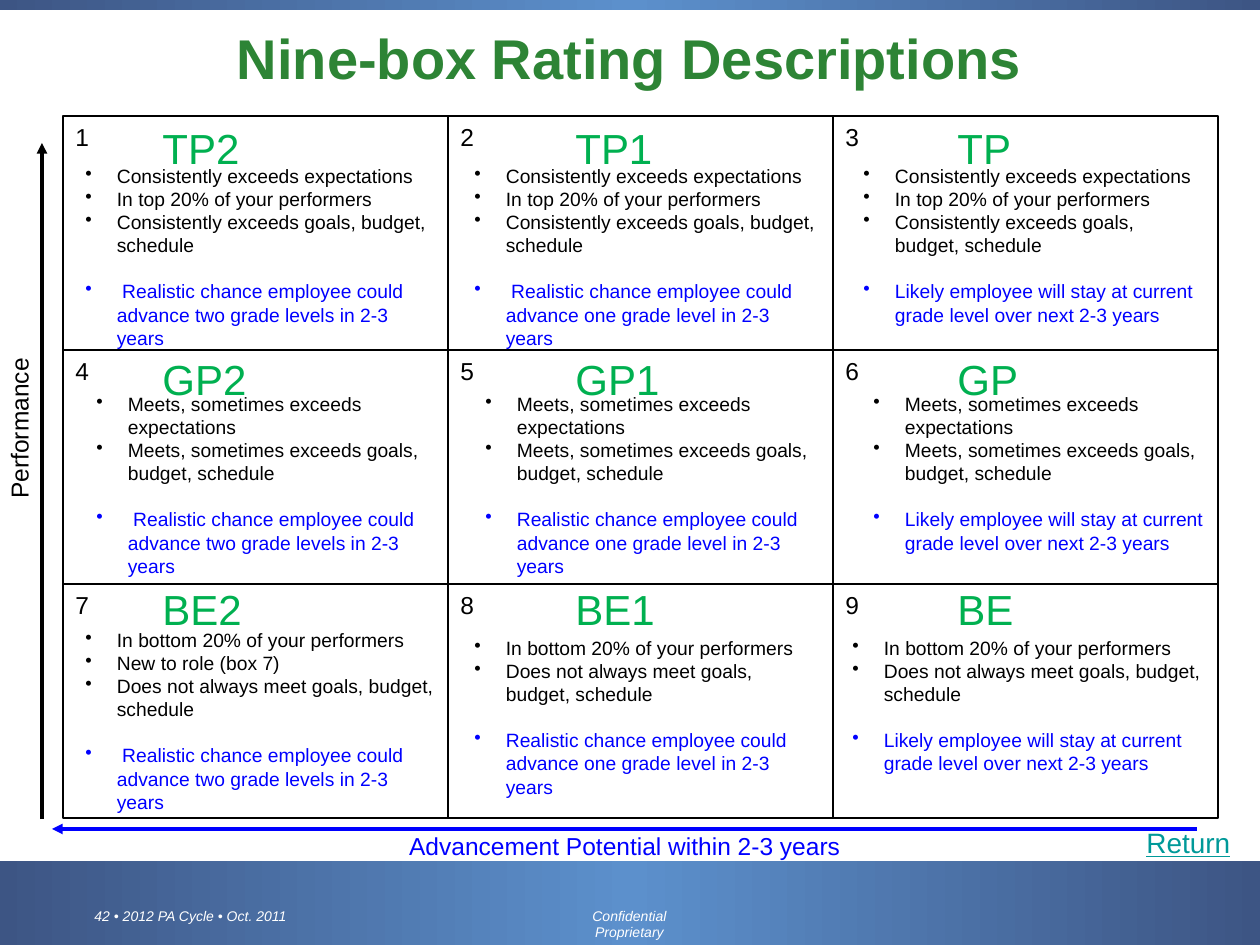
from copy import deepcopy

from lxml.etree import SubElement
from pptx import Presentation
from pptx.dml.color import RGBColor
from pptx.enum.shapes import MSO_CONNECTOR, MSO_SHAPE
from pptx.enum.text import MSO_ANCHOR, MSO_AUTO_SIZE, PP_ALIGN
from pptx.oxml.ns import qn
from pptx.util import Emu, Pt

BLACK = RGBColor(0, 0, 0)
WHITE = RGBColor(255, 255, 255)
BLUE = RGBColor(0, 0, 255)
GREEN = RGBColor(0, 0xB0, 0x50)
TITLE_GREEN = RGBColor(0x2D, 0x84, 0x35)
TEAL = RGBColor(0, 0x99, 0x99)
BAND_DARK = RGBColor(0x3D, 0x55, 0x84)
BAND_LIGHT = RGBColor(0x5C, 0x90, 0xCC)

TOP = ["Consistently exceeds expectations", "In top 20% of your performers",
       "Consistently exceeds goals, budget, schedule"]
GOOD = ["Meets, sometimes exceeds expectations",
        "Meets, sometimes exceeds goals, budget, schedule"]
BELOW = ["In bottom 20% of your performers",
         "Does not always meet goals, budget, schedule"]
BELOW_NEW = [BELOW[0], "New to role (box 7)", BELOW[1]]
TWO_LEVELS = " Realistic chance employee could advance two grade levels in 2-3 years"
ONE_LEVEL = "Realistic chance employee could advance one grade level in 2-3 years"
STAY = "Likely employee will stay at current grade level over next 2-3 years"

RATINGS = [
    ("TP2", TOP, TWO_LEVELS, (73, 158, 378, 199)),
    ("TP1", TOP, " " + ONE_LEVEL, (462, 158, 368, 199)),
    ("TP", TOP, STAY, (851, 158, 357, 176)),
    ("GP2", GOOD, TWO_LEVELS, (84, 386, 378, 199)),
    ("GP1", GOOD, ONE_LEVEL, (473, 386, 368, 199)),
    ("GP", GOOD, STAY, (861, 386, 357, 176)),
    ("BE2", BELOW_NEW, TWO_LEVELS, (73, 622, 378, 199)),
    ("BE1", BELOW, ONE_LEVEL, (462, 630, 368, 176)),
    ("BE", BELOW, STAY, (840, 630, 378, 152)),
]
GRID_LEFT, GRID_TOP, CELL_WIDTH, CELL_HEIGHT = 63, 116, 385, 234
LABEL_LEFTS = [150, 563, 945]
LABEL_TOPS = [116, 347, 577]
LABEL_WIDTH, LABEL_HEIGHT = 110, 63
BANDS = [(0, 861, 1260, 84), (0, 0, 1260, 10)]
ARROWS = [((42, 819), (42, 143), BLACK), ((1197, 829), (52, 829), BLUE)]


def px(value):
    return Emu(round(value * 914400 / 126))


def lengths(values):
    return [px(value) for value in values]


def style(font, size, color):
    font.name = "Arial"
    font.size = Pt(size)
    font.color.rgb = color


def add_rectangle(page, frame):
    box = page.shapes.add_shape(MSO_SHAPE.RECTANGLE, *lengths(frame))
    box.shadow.inherit = False
    return box


def add_text(page, frame, text, size, color, align=PP_ALIGN.LEFT, wrap=True):
    box = page.shapes.add_textbox(*lengths(frame))
    box.text_frame.word_wrap = wrap
    box.text_frame.text = text
    paragraph = box.text_frame.paragraphs[0]
    paragraph.alignment = align
    style(paragraph.runs[0].font, size, color)
    return box


def add_band(page, frame):
    band = add_rectangle(page, frame)
    band.line.fill.background()
    band.fill.gradient()
    band.fill.gradient_angle = 0
    start, middle = band.fill.gradient_stops
    start.color.rgb, start.position = BAND_DARK, 0
    middle.color.rgb, middle.position = BAND_LIGHT, 0.5
    stops = band._element.spPr.find(".//" + qn("a:gsLst"))
    end = deepcopy(stops[0])
    end.set("pos", "100000")
    stops.append(end)


def add_description(page, frame, points, outlook):
    box = add_rectangle(page, frame)
    box.fill.solid()
    box.fill.fore_color.rgb = WHITE
    box.line.fill.background()
    text_frame = box.text_frame
    text_frame.word_wrap = True
    text_frame.vertical_anchor = MSO_ANCHOR.TOP
    text_frame.text = "\n".join([*points, outlook])
    for paragraph in text_frame.paragraphs:
        paragraph.alignment = PP_ALIGN.LEFT
        properties = paragraph._p.get_or_add_pPr()
        properties.set("marL", "228600")
        properties.set("indent", "-228600")
        SubElement(properties, qn("a:buChar"), char="•")
        style(paragraph.runs[0].font, 11, BLACK)
    last = text_frame.paragraphs[-1]
    last.space_before = Pt(13.2)
    last.runs[0].font.color.rgb = BLUE


def add_arrow(page, start, end, color):
    arrow = page.shapes.add_connector(MSO_CONNECTOR.STRAIGHT, *lengths(start + end))
    arrow.line.color.rgb = color
    arrow.line.width = Pt(2)
    SubElement(arrow.line._get_or_add_ln(), qn("a:tailEnd"), type="triangle")
    SubElement(arrow._element.spPr, qn("a:effectLst"))


def main():
    deck = Presentation()
    deck.slide_width, deck.slide_height = px(1260), px(945)
    page = deck.slides.add_slide(deck.slide_layouts[5])

    title = page.shapes.title
    title.left, title.top, title.width, title.height = lengths((10, 10, 1239, 95))
    title.text_frame.text = "Nine-box Rating Descriptions"
    title.text_frame.auto_size = MSO_AUTO_SIZE.NONE
    title.text_frame.vertical_anchor = MSO_ANCHOR.MIDDLE
    heading = title.text_frame.paragraphs[0]
    heading.alignment = PP_ALIGN.CENTER
    style(heading.runs[0].font, 32, TITLE_GREEN)
    heading.runs[0].font.bold = True

    for frame in BANDS:
        add_band(page, frame)
    footers = [
        add_text(page, (82, 901, 335, 29), "42 • 2012 PA Cycle • Oct. 2011", 8, WHITE),
        add_text(page, (544, 901, 171, 29), "Confidential\vProprietary", 8, WHITE,
                 PP_ALIGN.CENTER),
    ]
    for footer in footers:
        for span in footer.text_frame.paragraphs[0].runs:
            style(span.font, 8, WHITE)
            span.font.italic = True

    for name, points, outlook, frame in RATINGS:
        add_description(page, frame, points, outlook)

    for index, (name, *details) in enumerate(RATINGS):
        row, column = divmod(index, 3)
        left = GRID_LEFT + column * CELL_WIDTH
        top = GRID_TOP + row * CELL_HEIGHT
        cell = add_rectangle(page, (left, top, CELL_WIDTH, CELL_HEIGHT))
        cell.fill.background()
        cell.line.color.rgb = BLACK
        cell.line.width = Pt(1)
        add_text(page, (left, top, 64, 44), str(index + 1), 14, BLACK)
        add_text(page, (LABEL_LEFTS[column], LABEL_TOPS[row], LABEL_WIDTH, LABEL_HEIGHT),
                 name, 24, GREEN)

    performance = add_text(page, (-94, 407, 227, 43), "Performance", 14, BLACK,
                           PP_ALIGN.CENTER)
    performance.rotation = 270
    add_text(page, (305, 825, 640, 43), "Advancement Potential within 2-3 years", 14,
             BLUE, PP_ALIGN.CENTER)
    for start, end, color in ARROWS:
        add_arrow(page, start, end, color)
    link = add_text(page, (1134, 819, 110, 47), "Return", 16, TEAL, wrap=False)
    link.text_frame.paragraphs[0].runs[0].font.underline = True

    deck.save("out.pptx")


if __name__ == "__main__":
    main()
